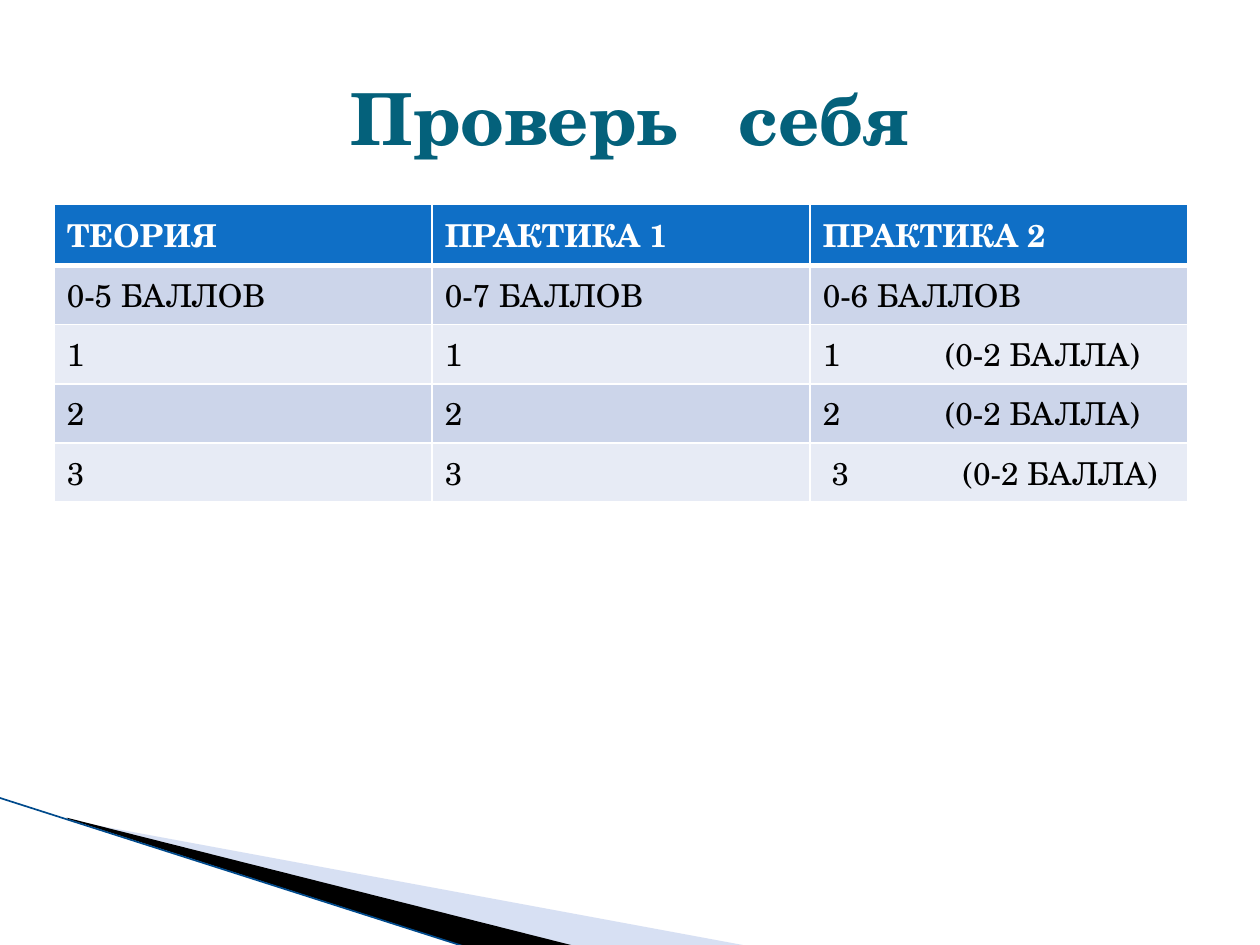
from lxml import etree
from pptx import Presentation
from pptx.dml.color import RGBColor
from pptx.enum import shapes, text
from pptx.oxml import ns
from pptx.util import Inches, Pt

FONT = "TeX Gyre Schola"
WHITE = RGBColor(0xFF, 0xFF, 0xFF)
BLACK = RGBColor(0x00, 0x00, 0x00)
TEAL = RGBColor(0x04, 0x61, 0x7B)
HEADER = RGBColor(0x0F, 0x6F, 0xC6)
BANDS = [RGBColor(0xE7, 0xEB, 0xF5), RGBColor(0xCC, 0xD5, 0xEA)]
PALE = RGBColor(0x9D, 0xB2, 0xE1)
NAVY = RGBColor(0x00, 0x4A, 0x8C)

TITLE = ("Проверь", " ", "себя")
TITLE_GAP = 23  # points added to the space between the words
ROWS = [
    ("ТЕОРИЯ", "ПРАКТИКА 1", "ПРАКТИКА 2"),
    ("0-5 БАЛЛОВ", "0-7 БАЛЛОВ", "0-6 БАЛЛОВ"),
    ("1", "1", "1\t(0-2 БАЛЛА)"),
    ("2", "2", "2\t(0-2 БАЛЛА)"),
    ("3", "3", "3\t(0-2 БАЛЛА)"),
]
LAST_INDENT = 0.07
SCORE_TAB = 0.97
COL_W, ROW_H = 3, 0.47
WEDGES = [
    ([(0.55, 6.51), (5.95, 7.51), (4.56, 7.51), (0.55, 6.5)], PALE, 40),
    ([(0.53, 6.49), (4.57, 7.51), (3.72, 7.52), (0.54, 6.5)], BLACK, 100),
]
EDGE = [(-0.01, 6.33), (3.71, 7.52)]


def child(parent, tag, **attrs):
    return etree.SubElement(parent, ns.qn(tag), {k: str(v) for k, v in attrs.items()})


def style(font, **values):
    color = values.pop("color")
    for name, value in values.items():
        setattr(font, name, value)
    font.color.rgb = color


def add_wedge(s, points, color, alpha):
    builder = s.shapes.build_freeform(*map(Inches, points[0]))
    builder.add_line_segments([tuple(map(Inches, pt)) for pt in points[1:]])
    sp = builder.convert_to_shape()
    sp.shadow.inherit = False
    sp.line.fill.background()
    sp.fill.solid()
    sp.fill.fore_color.rgb = color
    if alpha < 100:
        clr = sp.fill._xPr.find(".//" + ns.qn("a:srgbClr"))
        child(clr, "a:alpha", val=alpha * 1000)


def add_edge(s):
    ends = [Inches(v) for point in EDGE for v in point]
    line = s.shapes.add_connector(shapes.MSO_CONNECTOR.STRAIGHT, *ends)
    line.line.color.rgb = NAVY
    line.line.width = Pt(0.95)
    child(line._element.spPr, "a:effectLst")


def add_borders(cell, bottom):
    tc_pr = cell._tc.get_or_add_tcPr()
    for side, width in zip("LRTB", (1, 1, 1, bottom)):
        ln = child(tc_pr, "a:ln" + side, w=Pt(width))
        child(child(ln, "a:solidFill"), "a:srgbClr", val=WHITE)


def fill_cell(cell, content, row):
    head = row == 0
    add_borders(cell, 3 if head else 1)
    cell.fill.solid()
    cell.fill.fore_color.rgb = HEADER if head else BANDS[row % 2]
    p = cell.text_frame.paragraphs[0]
    r = p.add_run()
    r.text = content
    if "\t" in content:
        indent = LAST_INDENT if row == len(ROWS) - 1 else 0
        p_pr = p._p.get_or_add_pPr()
        p_pr.set("marL", str(Inches(indent)))
        tabs = child(p_pr, "a:tabLst")
        child(tabs, "a:tab", pos=Inches(SCORE_TAB + indent), algn="l")
    style(r.font, name=FONT, size=Pt(18), bold=head, color=WHITE if head else BLACK)


def add_scores(s):
    n_rows, n_cols = len(ROWS), len(ROWS[0])
    table = s.shapes.add_table(n_rows, n_cols, Inches(0.43), Inches(1.62),
                               Inches(COL_W * n_cols), Inches(ROW_H * n_rows)).table
    for i, row in enumerate(ROWS):
        for j, content in enumerate(row):
            fill_cell(table.cell(i, j), content, i)


def add_title(s):
    tf = s.shapes.add_textbox(Inches(0.5), Inches(0.3), Inches(9), Inches(1.25)).text_frame
    tf.word_wrap = True
    tf.vertical_anchor = text.MSO_ANCHOR.MIDDLE
    p = tf.paragraphs[0]
    p.alignment = text.PP_ALIGN.CENTER
    for part in TITLE:
        r = p.add_run()
        r.text = part
        style(r.font, name=FONT, size=Pt(41), bold=True, color=TEAL)
        if part == " ":
            r._r.get_or_add_rPr().set("spc", str(TITLE_GAP * 100))


def main():
    prs = Presentation()
    prs.slide_width, prs.slide_height = Inches(10), Inches(7.5)
    s = prs.slides.add_slide(prs.slide_layouts[6])
    for wedge in WEDGES:
        add_wedge(s, *wedge)
    add_edge(s)
    add_scores(s)
    add_title(s)
    prs.save("out.pptx")


if __name__ == "__main__":
    main()
